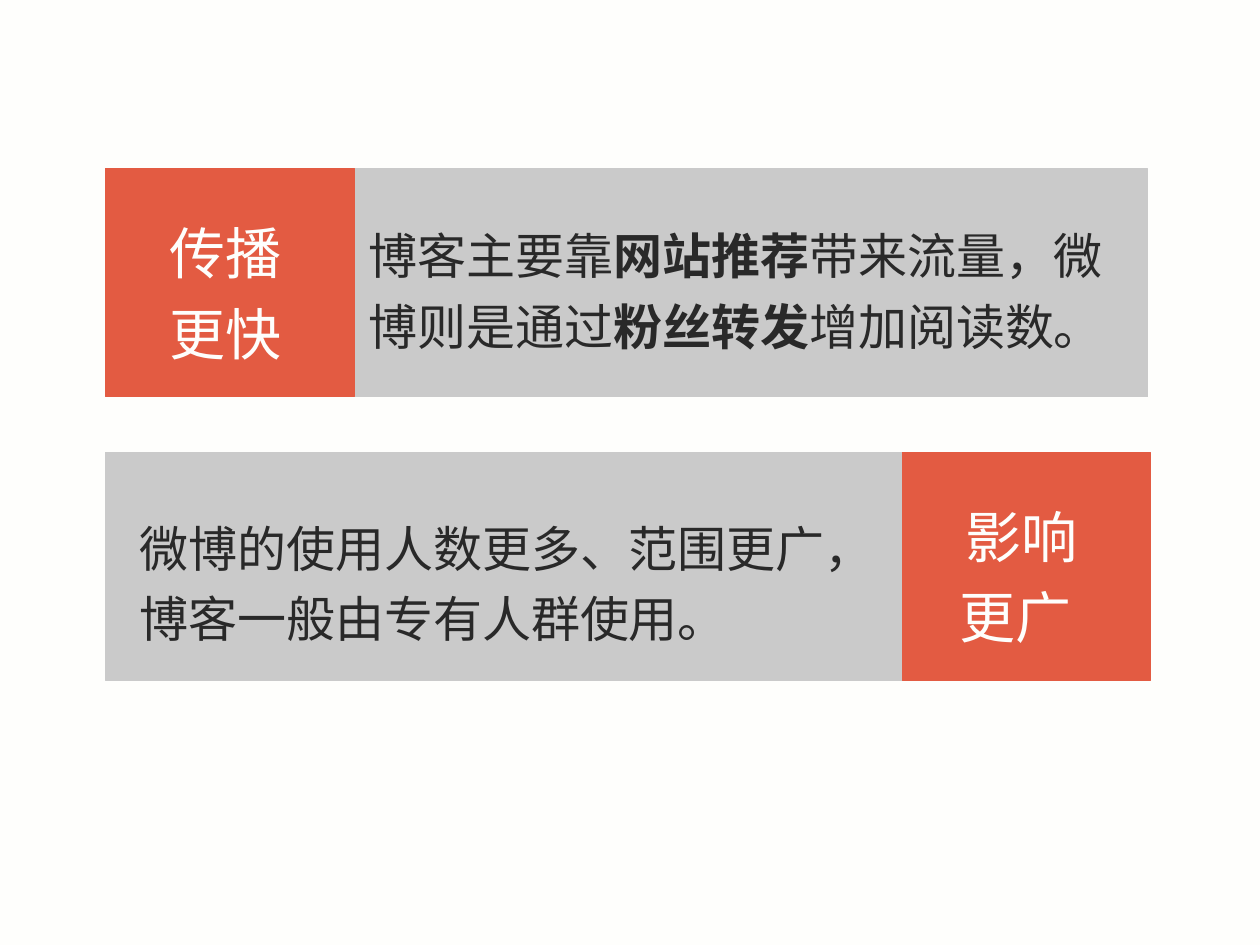
from lxml import etree
from pptx import Presentation
from pptx.dml.color import RGBColor
from pptx.enum.shapes import MSO_SHAPE
from pptx.enum.text import MSO_AUTO_SIZE, PP_ALIGN
from pptx.oxml.ns import qn
from pptx.util import Inches, Pt

RECTANGLE = MSO_SHAPE.RECTANGLE
GROW = MSO_AUTO_SIZE.SHAPE_TO_FIT_TEXT
LEFT, CENTER = PP_ALIGN.LEFT, PP_ALIGN.CENTER

COLORS = {"background": "FEFEFC", "panel": "CACACA", "accent": "E35B42", "body": "292929"}
FONT = "Noto Sans CJK SC"
BAND_LEFT, BAND_WIDTH, BAND_HEIGHT = 0.84, 8.27, 1.81
LABEL_WIDTH = 1.97


def color(name):
    return RGBColor.from_string(COLORS[name])


def add_block(slide, box, fill):
    block = slide.shapes.add_shape(RECTANGLE, *map(Inches, box))
    block.shadow.inherit = False
    block.fill.solid()
    block.fill.fore_color.rgb = color(fill)
    block.line.color.rgb = color(fill)
    block.line.width = Pt(0.5)


def add_text(slide, box, runs, size, text_color, alignment):
    frame = slide.shapes.add_textbox(*map(Inches, box)).text_frame
    frame.word_wrap = True
    frame.auto_size = GROW
    paragraph = frame.paragraphs[0]
    paragraph.alignment = alignment
    paragraph.line_spacing = 1.2
    paragraph.font.size = Pt(size)
    paragraph.font.name = FONT
    paragraph.font.color.rgb = color(text_color)
    defaults = paragraph._p.pPr.find(qn("a:defRPr"))
    etree.SubElement(defaults, qn("a:ea")).set("typeface", FONT)
    for wording, bold in runs:
        run = paragraph.add_run()
        run.text = wording
        if bold:
            run.font.bold = True


def add_band(slide, box, label_left, label, body_box, body_runs):
    left, top, width, height = box
    add_block(slide, box, "panel")
    add_block(slide, (label_left, top, LABEL_WIDTH, height), "accent")
    add_text(slide, (label_left + 0.24, top + 0.24, 1.42, 1.31),
             [(label, False)], 32, "background", CENTER)
    add_text(slide, body_box, body_runs, 28, "body", LEFT)


def main():
    presentation = Presentation()
    presentation.slide_width = Inches(10)
    presentation.slide_height = Inches(7.5)
    slide = presentation.slides.add_slide(presentation.slide_layouts[6])
    slide.background.fill.solid()
    slide.background.fill.fore_color.rgb = color("background")

    add_band(slide, (BAND_LEFT, 1.34, BAND_WIDTH, BAND_HEIGHT), BAND_LEFT, "传播更快",
             (2.83, 1.65, 6.22, 1.23),
             [("博客主要靠", False), ("网站推荐", True), ("带来流量，微博则是通过", False),
              ("粉丝转发", True), ("增加阅读数。", False)])
    add_band(slide, (BAND_LEFT, 3.59, BAND_WIDTH, BAND_HEIGHT), 7.16, "影响更广 ",
             (1.01, 3.97, 6.22, 1.16),
             [("微博的使用人数更多、范围更广，博客一般由专有人群使用。", False)])
    presentation.save("out.pptx")


if __name__ == "__main__":
    main()
